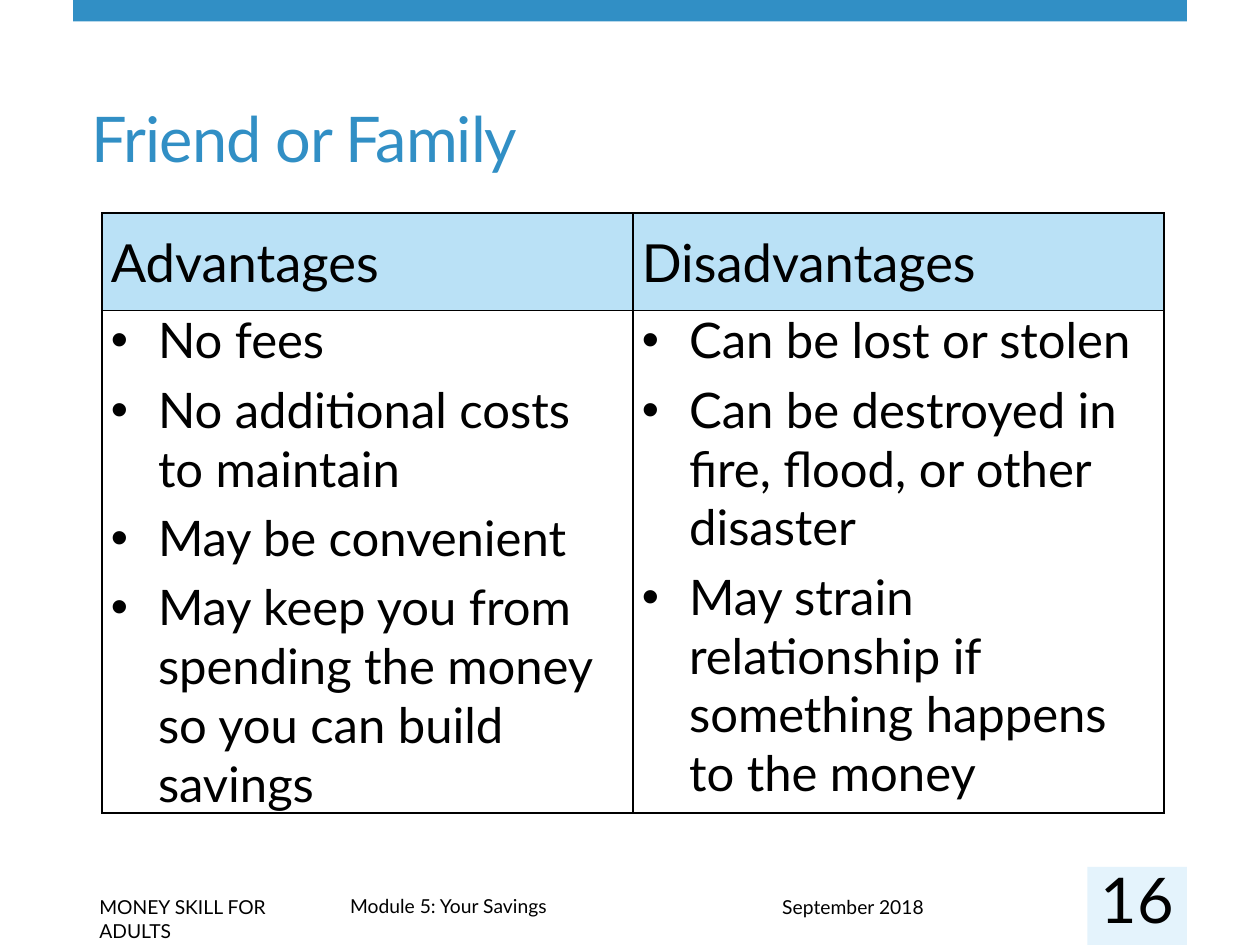
import pptx
import pptx.util
import pptx.dml.color
import pptx.enum.shapes
import pptx.enum.text
import pptx.oxml
import pptx.oxml.ns

Pt = pptx.util.Pt
Align = pptx.enum.text.PP_ALIGN
Anchor = pptx.enum.text.MSO_ANCHOR
NS = pptx.oxml.ns.nsdecls("a")


def color(code):
    return pptx.dml.color.RGBColor.from_string(code)


def write(para, text, size, code="000000"):
    """Add one run to the paragraph."""
    run = para.add_run()
    run.text = text
    run.font.name = "Lato"
    run.font.size = Pt(size)
    run.font.color.rgb = color(code)
    return run


deck = pptx.Presentation()
deck.slide_width, deck.slide_height = Pt(720), Pt(540)
slide = deck.slides.add_slide(deck.slide_layouts[5])

# Top bar and page number panel
for left, top, width, height, code in [
    (41.76, 0, 636.48, 12.24, "318FC5"),
    (621.36, 495.36, 56.88, 44.64, "E4F3FC"),
]:
    panel = slide.shapes.add_shape(
        pptx.enum.shapes.MSO_SHAPE.RECTANGLE,
        Pt(left), Pt(top), Pt(width), Pt(height))
    panel.shadow.inherit = False
    panel.fill.solid()
    panel.fill.fore_color.rgb = color(code)
    panel.line.fill.background()

# Title
title = slide.shapes.title
title.left, title.top = Pt(45.36), Pt(34.56)
title.width, title.height = Pt(590.4), Pt(69.12)
title.text_frame.vertical_anchor = Anchor.BOTTOM
para = title.text_frame.paragraphs[0]
para.alignment = Align.LEFT
run = write(para, "Friend or Family", 36, "318FC5")
run.font._element.set("spc", "-60")

# Comparison table
heads = ["Advantages", "Disadvantages"]
lists = [
    ["No fees",
     "No additional costs to maintain",
     "May be convenient",
     "May keep you from spending the money so you can build savings"],
    ["Can be lost or stolen",
     "Can be destroyed in fire, flood, or other disaster",
     "May strain relationship if something happens to the money"],
]
table = slide.shapes.add_table(
    2, 2, Pt(58.32), Pt(121.68), Pt(606.96), Pt(342.72)).table
table.horz_banding = False
table.rows[0].height, table.rows[1].height = Pt(55.8), Pt(286.92)

for cell in table.iter_cells():
    cell.margin_left = cell.margin_right = Pt(5)
    cell.margin_top = cell.margin_bottom = 0
    props = cell._tc.get_or_add_tcPr()
    for side in ("lnL", "lnR", "lnT", "lnB"):
        props.append(pptx.oxml.parse_xml(
            f'<a:{side} {NS} w="12700"><a:solidFill>'
            f'<a:srgbClr val="000000"/></a:solidFill></a:{side}>'))

for col, (head, items) in enumerate(zip(heads, lists)):
    cell = table.cell(0, col)
    cell.vertical_anchor = Anchor.MIDDLE
    cell.fill.solid()
    cell.fill.fore_color.rgb = color("76C5EF")
    tint = cell._tc.tcPr.find(".//" + pptx.oxml.ns.qn("a:solidFill")
                              + "[last()]")
    tint = cell._tc.tcPr.xpath("./a:solidFill/a:srgbClr")[0]
    tint.append(pptx.oxml.parse_xml(f'<a:alpha {NS} val="50000"/>'))
    para = cell.text_frame.paragraphs[0]
    para.space_after = Pt(12)
    write(para, head, 30).font.bold = False

    cell = table.cell(1, col)
    cell.fill.background()
    frame = cell.text_frame
    for row, item in enumerate(items):
        para = frame.add_paragraph() if row else frame.paragraphs[0]
        props = para._p.get_or_add_pPr()
        props.set("marL", str(Pt(27)))
        props.set("indent", str(-Pt(27)))
        for tag in (
            f'<a:buFont {NS} typeface="Arial"/>',
            f'<a:buChar {NS} char="•"/>',
            f'<a:tabLst {NS}><a:tab pos="{Pt(36)}" algn="l"/></a:tabLst>',
        ):
            props.append(pptx.oxml.parse_xml(tag))
        para.space_after = Pt(6)
        write(para, item, 28)

# Footer texts and page number
for text, left, top, width, height, size in [
    ("MONEY SKILL FOR ADULTS", 49.68, 508.32, 130, 20.88, 11),
    ("Module 5: Your Savings", 192.96, 507.6, 407.52, 20.88, 11),
    ("September 2018", 439.92, 508.32, 181.44, 20.88, 11),
    ("16", 621.36, 491.76, 56.88, 32.4, 36),
]:
    box = slide.shapes.add_textbox(Pt(left), Pt(top), Pt(width), Pt(height))
    frame = box.text_frame
    frame.word_wrap = True
    para = frame.paragraphs[0]
    if text == "16":
        frame.margin_left = frame.margin_right = 0
        frame.margin_top = frame.margin_bottom = 0
        para.alignment = Align.CENTER
    write(para, text, size)

deck.save("out.pptx")
